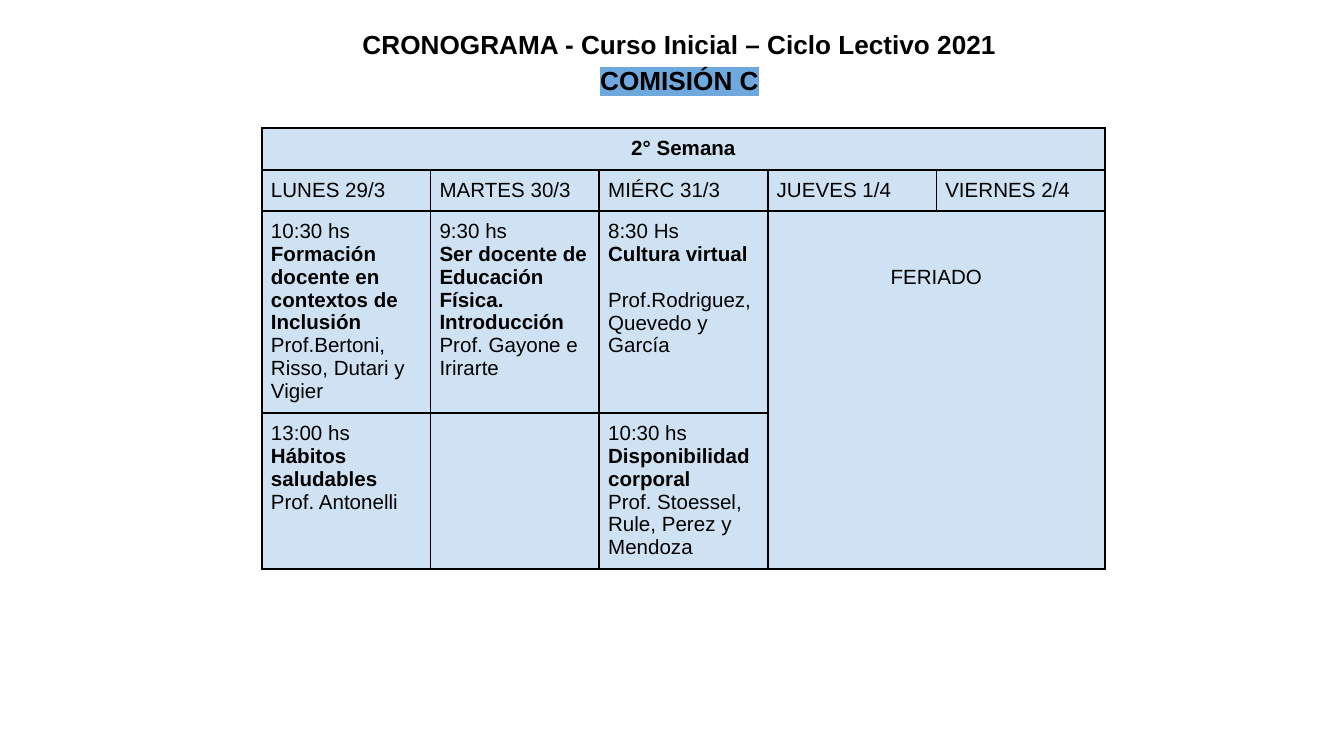
from lxml.etree import SubElement
from pptx import Presentation
from pptx.dml.color import RGBColor
from pptx.enum.text import MSO_ANCHOR, MSO_AUTO_SIZE, PP_ALIGN
from pptx.oxml import parse_xml
from pptx.oxml.ns import nsdecls, qn
from pptx.util import Pt

PX = 914400 / 134.4
BLACK = RGBColor(0x00, 0x00, 0x00)
PALE_BLUE = RGBColor(0xCF, 0xE2, 0xF3)
HIGHLIGHT = RGBColor(0x6F, 0xA8, 0xDC)
LINE_GAP = 23
CELL_INSET = 9


def px(length):
    return round(length * PX)


def add_text(paragraph, text, size, bold):
    run = paragraph.add_run()
    run.text = text
    font_format = {"name": "Arial", "size": Pt(size), "bold": bold}
    for attribute, value in font_format.items():
        setattr(run.font, attribute, value)
    run.font.color.rgb = BLACK
    return run


prs = Presentation()
prs.slide_width, prs.slide_height = px(1344), px(756)
slide = prs.slides.add_slide(prs.slide_layouts[5])

# Heading
heading = slide.shapes.title
heading_place = {"left": 266, "top": 17, "width": 827, "height": 86}
for attribute, value in heading_place.items():
    setattr(heading, attribute, px(value))
heading_frame = heading.text_frame
frame_format = {"word_wrap": True, "auto_size": MSO_AUTO_SIZE.NONE,
                "vertical_anchor": MSO_ANCHOR.TOP}
for attribute, value in frame_format.items():
    setattr(heading_frame, attribute, value)

course_line = heading_frame.paragraphs[0]
group_line = heading_frame.add_paragraph()
for line, text in ((course_line, "CRONOGRAMA - Curso Inicial – Ciclo Lectivo 2021"),
                   (group_line, "COMISIÓN C")):
    line.alignment = PP_ALIGN.CENTER
    line.line_spacing = 1.15
    group_run = add_text(line, text, 14, True)
highlight = parse_xml(f'<a:highlight {nsdecls("a")}><a:srgbClr val="{HIGHLIGHT}"/></a:highlight>')
group_run.font.fill._xPr.find(qn("a:solidFill")).addnext(highlight)

# Each cell: a list of (text, bold, gap before in px)
days = ["LUNES 29/3", "MARTES 30/3", "MIÉRC 31/3", "JUEVES 1/4", "VIERNES 2/4"]
week = [
    [[("2° Semana", True, 0)]],
    [[(day, False, 0)] for day in days],
    [
        [("10:30 hs", False, 0),
         ("Formación docente en contextos de Inclusión", True, 0),
         ("Prof.Bertoni, Risso, Dutari y Vigier", False, 0)],
        [("9:30 hs", False, 0),
         ("Ser docente de Educación Física. Introducción", True, 0),
         ("Prof. Gayone e Irirarte", False, 0)],
        [("8:30 Hs", False, 0),
         ("Cultura virtual", True, 0),
         ("Prof.Rodriguez, Quevedo y", False, LINE_GAP),
         ("García", False, 0)],
        [("FERIADO", False, 0)],
    ],
    [
        [("13:00 hs", False, 0),
         ("Hábitos saludables", True, 0),
         ("Prof. Antonelli", False, 0)],
        [],
        [("10:30 hs", False, 0),
         ("Disponibilidad corporal", True, 0),
         ("Prof. Stoessel, Rule, Perez y Mendoza", False, 0)],
    ],
]
row_heights = [42, 41, 202, 156]

schedule = slide.shapes.add_table(
    len(week), len(days), px(262), px(128), px(843), px(sum(row_heights))).table
for row, height in zip(schedule.rows, row_heights):
    row.height = px(height)

for cell in schedule.iter_cells():
    for side in ("margin_left", "margin_right", "margin_top", "margin_bottom"):
        setattr(cell, side, px(CELL_INSET))
    cell_properties = cell._tc.get_or_add_tcPr()
    for edge in ("a:lnL", "a:lnR", "a:lnT", "a:lnB"):
        border = SubElement(cell_properties, qn(edge), w=str(Pt(1)))
        SubElement(SubElement(border, qn("a:solidFill")), qn("a:srgbClr"), val=str(BLACK))
    cell.fill.solid()
    cell.fill.fore_color.rgb = PALE_BLUE

week_cell = schedule.cell(0, 0)
holiday_cell = schedule.cell(2, 3)
week_cell.merge(schedule.cell(0, 4))
holiday_cell.merge(schedule.cell(3, 4))

for row_index, entries in enumerate(week):
    for column_index, lines in enumerate(entries):
        frame = schedule.cell(row_index, column_index).text_frame
        for line_index, (text, bold, gap) in enumerate(lines):
            paragraph = frame.add_paragraph() if line_index else frame.paragraphs[0]
            paragraph.space_before = px(gap)
            add_text(paragraph, text, 11, bold)

for cell in (week_cell, holiday_cell):
    cell.text_frame.paragraphs[0].alignment = PP_ALIGN.CENTER
holiday_cell.margin_top = px(CELL_INSET + 2 * LINE_GAP)

prs.save("out.pptx")
